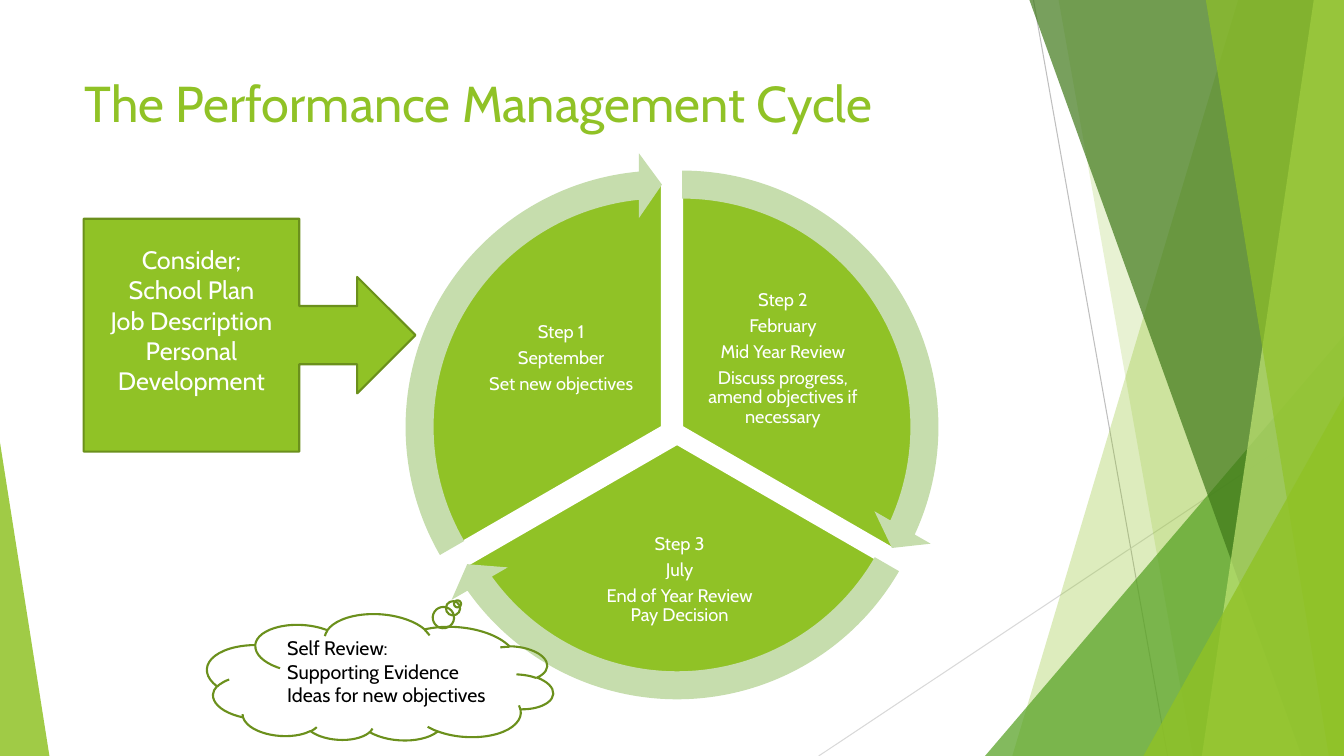
import copy
from dataclasses import dataclass
from typing import Any

import pptx
import pptx.dml.color
import pptx.enum.shapes
import pptx.enum.text
import pptx.oxml
import pptx.oxml.ns
import pptx.util
from pptx.util import Inches

RGBColor = pptx.dml.color.RGBColor
MSO_SHAPE = pptx.enum.shapes.MSO_SHAPE
ANCHOR = pptx.enum.text.MSO_ANCHOR
ALIGN = pptx.enum.text.PP_ALIGN
Pt = pptx.util.Pt
qn = pptx.oxml.ns.qn

LIME = RGBColor(0x90, 0xC2, 0x26)
GREEN = RGBColor(0x54, 0xA0, 0x21)
FOREST = RGBColor(0x3F, 0x78, 0x19)
PALE_LIME = RGBColor(0xC0, 0xE4, 0x74)
SAGE = RGBColor(0xC6, 0xDD, 0xAD)
OLIVE = RGBColor(0x6B, 0x90, 0x1C)
GREY = RGBColor(0xBF, 0xBF, 0xBF)
LIGHT_GREY = RGBColor(0xD9, 0xD9, 0xD9)
WHITE = RGBColor(0xFF, 0xFF, 0xFF)
BLACK = RGBColor(0, 0, 0)

SLIDE_W, SLIDE_H = 13.33, 7.5
WEDGE_SIZE, ARROW_SIZE = 4.85, 5.45
FONT = "Cabin"


@dataclass
class Ray:
    start: tuple[float, float]
    end: tuple[float, float]
    color: RGBColor


@dataclass
class Band:
    top: float
    bottom: float
    color: RGBColor
    opacity: int


@dataclass
class Corner:
    left: float
    top: float
    width: float
    apex: float
    color: RGBColor
    opacity: int


@dataclass
class Step:
    wedge: tuple[float, float]
    angles: tuple[float, float]
    arrow: tuple[float, float]
    arrow_angles: tuple[float, float]
    label: tuple[float, float, float, float]
    lines: tuple[str, ...]


RAYS = [
    Ray((10.25, 0), (11.58, SLIDE_H), GREY),
    Ray((SLIDE_W, 4.03), (8.12, SLIDE_H), LIGHT_GREY),
]

FACETS = [
    Band(12.28, 10.04, LIME, 30),
    Band(10.5, 11.83, LIME, 20),
    Corner(9.77, 3.33, 3.56, 1, GREEN, 72),
    Band(10.21, 12.91, FOREST, 70),
    Band(13.03, 11.92, PALE_LIME, 70),
    Band(11.96, 13.18, LIME, 65),
    Corner(11.34, 3.93, 1.99, 1, LIME, 80),
    Corner(0, 4.39, 0.49, 0, LIME, 85),
]

STEPS = [
    Step((4.34, 1.81), (162, 18), (4.04, 1.51), (14.725, 161.994), (6.9, 2.84, 1.73, 1.44),
         ("Step 2", "February", "Mid Year Review",
          "Discuss progress, amend objectives if necessary")),
    Step((4.29, 1.98), (18, 90), (3.99, 1.67), (86.72, 18.005), (5.44, 5.12, 2.6, 1.27),
         ("Step 3", "July", "End of Year Review\nPay Decision")),
    Step((4.14, 1.81), (90, 162), (3.84, 1.51), (158.73, 90), (4.7, 2.84, 1.73, 1.44),
         ("Step 1", "September", "Set new objectives")),
]

CONSIDERATIONS = ("Consider;", "School Plan", "Job Description", "Personal Development")
SELF_REVIEW = ("Self Review:", "Supporting Evidence", "Ideas for new objectives")

CENTRED = {"alignment": ALIGN.CENTER}
STEP_PARAGRAPH = {"alignment": ALIGN.CENTER, "line_spacing": 0.9, "space_after": Pt(4.5)}
STEP_FRAME = {"vertical_anchor": ANCHOR.MIDDLE} | {
    f"margin_{side}": Inches(0.02) for side in ("left", "right", "top", "bottom")}
CALLOUT_FRAME = {"vertical_anchor": ANCHOR.MIDDLE, "margin_bottom": Inches(0.35)}


def apply(target: Any, values: dict[str, Any]) -> None:
    for name, value in values.items():
        setattr(target, name, value)


def paint(shape: Any, fill: RGBColor | None, line: RGBColor | None = None,
          opacity: int = 100) -> None:
    shape.shadow.inherit = False
    if fill is None:
        shape.fill.background()
    else:
        shape.fill.solid()
        shape.fill.fore_color.rgb = fill
    if opacity < 100:
        color = shape.fill._xPr.find(qn("a:solidFill"))[0]
        pptx.oxml.ns.nsdecls("a")
        alpha = color.makeelement(qn("a:alpha"), {"val": str(opacity * 1000)})
        color.append(alpha)
    if line is None:
        shape.line.fill.background()
    else:
        shape.line.color.rgb = line
        shape.line.width = Pt(1.5)


def write(frame: Any, lines: tuple[str, ...], size: float, color: RGBColor,
          paragraph_format: dict[str, Any], frame_format: dict[str, Any]) -> None:
    apply(frame, {"word_wrap": True} | frame_format)
    for index, line in enumerate(lines):
        paragraph = frame.add_paragraph() if index else frame.paragraphs[0]
        paragraph.text = line
        apply(paragraph, paragraph_format)
        for run in paragraph.runs:
            apply(run.font, {"name": FONT, "size": Pt(size)})
            run.font.color.rgb = color
        for line_break in paragraph._p.findall(qn("a:br")):
            line_break.insert(0, copy.deepcopy(paragraph.runs[0].font._element))


def add_preset(shapes: Any, kind: Any, box: tuple[float, ...],
               adjustments: tuple[float, ...] = ()) -> Any:
    shape = shapes.add_shape(kind, *map(Inches, box))
    for index, value in enumerate(adjustments):
        shape.adjustments[index] = value
    return shape


def add_label(shapes: Any, box: tuple[float, ...]) -> Any:
    return shapes.add_textbox(*map(Inches, box)).text_frame


def draw_ray(shapes: Any, ray: Ray) -> None:
    connector = shapes.add_connector(pptx.enum.shapes.MSO_CONNECTOR.STRAIGHT,
                                     *map(Inches, ray.start + ray.end))
    connector.line.color.rgb = ray.color
    connector.line.width = Pt(0.75)
    properties = connector._element.spPr
    properties.append(properties.makeelement(qn("a:effectLst"), {}))


def draw_facet(shapes: Any, facet: Band | Corner) -> None:
    if isinstance(facet, Band):
        builder = shapes.build_freeform(Inches(facet.top), 0)
        outline = [(SLIDE_W, 0), (SLIDE_W, SLIDE_H), (facet.bottom, SLIDE_H)]
        builder.add_line_segments([(Inches(x), Inches(y)) for x, y in outline])
        shape = builder.convert_to_shape()
    else:
        box = (facet.left, facet.top, facet.width, SLIDE_H - facet.top)
        shape = add_preset(shapes, MSO_SHAPE.ISOSCELES_TRIANGLE, box, (facet.apex,))
    paint(shape, facet.color, opacity=facet.opacity)


def draw_step(shapes: Any, step: Step) -> None:
    wedge = add_preset(shapes, MSO_SHAPE.PIE, step.wedge + (WEDGE_SIZE,) * 2, step.angles)
    paint(wedge, LIME, WHITE)
    write(add_label(shapes, step.label), step.lines, 13, WHITE, STEP_PARAGRAPH, STEP_FRAME)


def draw_step_arrow(shapes: Any, step: Step) -> None:
    arrow = add_preset(shapes, MSO_SHAPE.CIRCULAR_ARROW, step.arrow + (ARROW_SIZE,) * 2,
                       (0.051, 3.275, *step.arrow_angles, 0.059))
    paint(arrow, SAGE)


def main() -> None:
    deck = pptx.Presentation()
    apply(deck, {"slide_width": Inches(SLIDE_W), "slide_height": Inches(SLIDE_H)})
    shapes = deck.slides.add_slide(deck.slide_layouts[6]).shapes
    for ray in RAYS:
        draw_ray(shapes, ray)
    for facet in FACETS:
        draw_facet(shapes, facet)
    write(add_label(shapes, (0.74, 0.67, 9.4, 1.44)), ("The Performance Management Cycle",),
          36, LIME, {}, {})
    for step in STEPS:
        draw_step(shapes, step)
    for step in STEPS:
        draw_step_arrow(shapes, step)
    cloud = add_preset(shapes, MSO_SHAPE.CLOUD_CALLOUT, (2.05, 6.1, 3.44, 1.27))
    cloud.rotation = 183.8
    paint(cloud, None, OLIVE)
    write(add_label(shapes, (2.75, 6.26, 3.1, 0.81)), SELF_REVIEW, 14, BLACK, {}, {})
    considerations = add_preset(shapes, MSO_SHAPE.RIGHT_ARROW_CALLOUT, (0.83, 2.17, 3.29, 2.31))
    paint(considerations, LIME, OLIVE)
    write(considerations.text_frame, CONSIDERATIONS, 18, WHITE, CENTRED, CALLOUT_FRAME)
    deck.save("out.pptx")


if __name__ == "__main__":
    main()
